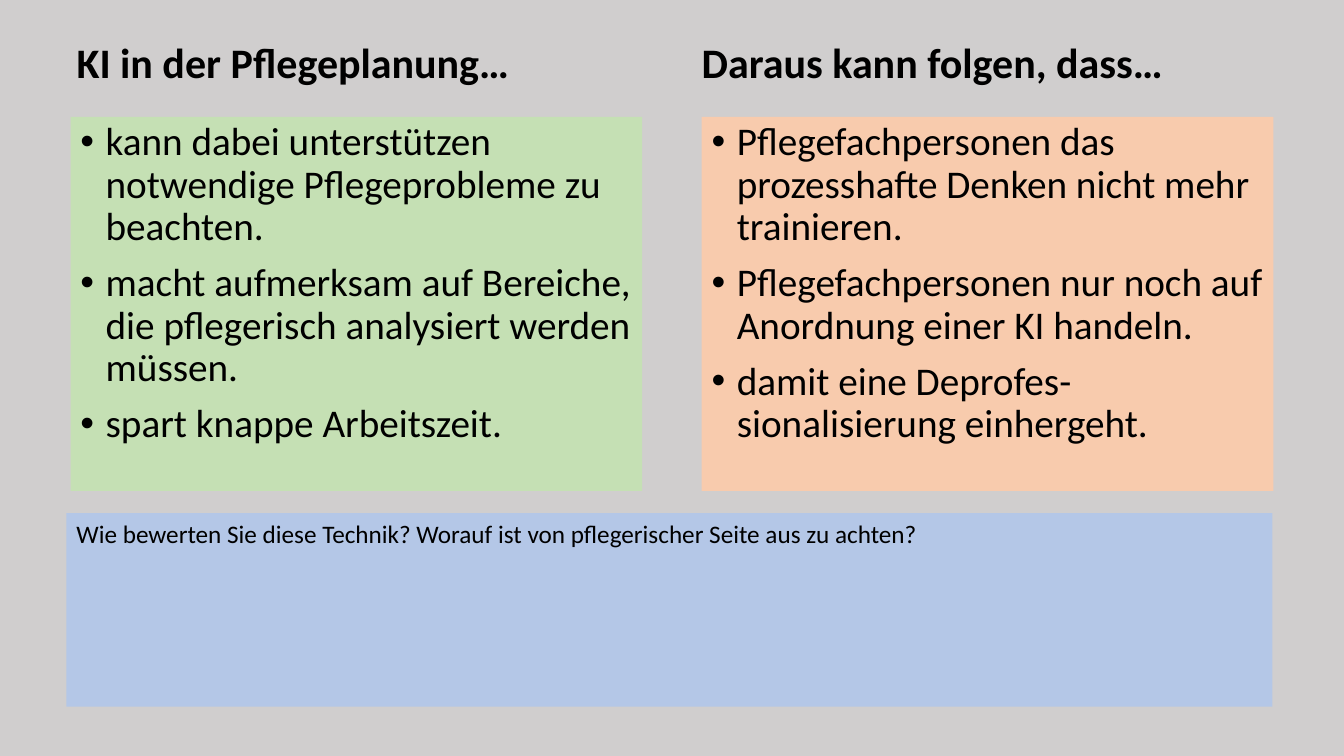
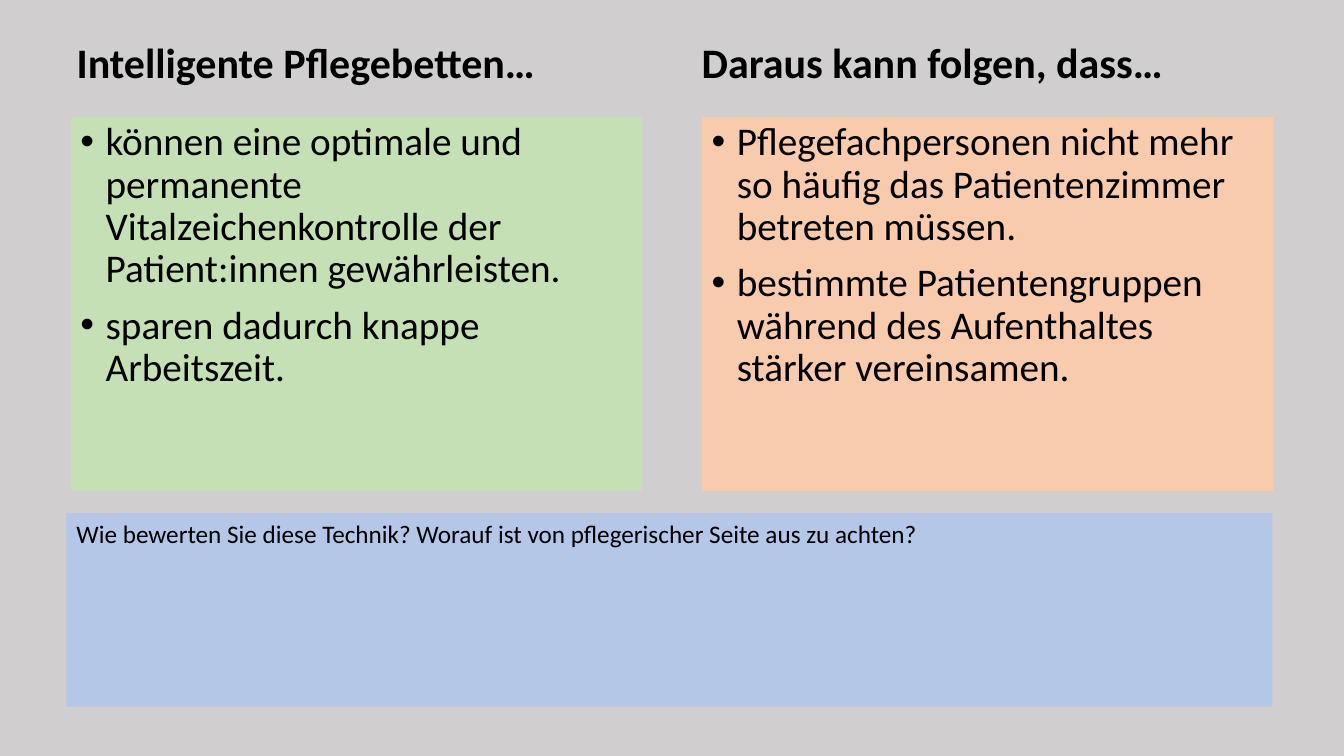
from lxml.etree import SubElement
from pptx import Presentation
from pptx.dml.color import RGBColor
from pptx.enum.shapes import MSO_SHAPE
from pptx.enum.text import MSO_ANCHOR, MSO_AUTO_SIZE, PP_ALIGN
from pptx.oxml.ns import qn
from pptx.util import Inches, Pt

BACKGROUND = RGBColor(0xD0, 0xCE, 0xCE)
GREEN = RGBColor(0xC5, 0xE0, 0xB4)
ORANGE = RGBColor(0xF8, 0xCB, 0xAD)
BLUE = RGBColor(0xB4, 0xC7, 0xE7)
BLACK = RGBColor(0, 0, 0)
FONT = "Calibri"

TITLE_BOX = (0.66, 0.31, 11.71, 0.61)
CLAIMS_BOX = (0.7, 1.16, 5.67, 3.71)
CONSEQUENCES_BOX = (6.96, 1.16, 5.67, 3.71)
QUESTION_BOX = (0.66, 5.09, 11.96, 1.92)
SECOND_HEADING_TAB = 6.2

CONSEQUENCES_HEADING = "Daraus kann folgen, dass…"
QUESTION = "Wie bewerten Sie diese Technik? Worauf ist von pflegerischer Seite aus zu achten?"

SLIDES = [
    (
        "KI in der Pflegeplanung…",
        [
            "kann dabei unterstützen notwendige Pflegeprobleme zu beachten.",
            "macht aufmerksam auf Bereiche, die pflegerisch analysiert werden müssen.",
            "spart knappe Arbeitszeit.",
        ],
        [
            "Pflegefachpersonen das prozesshafte Denken nicht mehr trainieren.",
            "Pflegefachpersonen nur noch auf Anordnung einer KI handeln.",
            "damit eine Deprofes-sionalisierung einhergeht.",
        ],
    ),
    (
        "Intelligente Pflegebetten…",
        [
            "können eine optimale und permanente Vitalzeichenkontrolle der Patient:innen gewährleisten.",
            "sparen dadurch knappe Arbeitszeit.",
        ],
        [
            "Pflegefachpersonen nicht mehr so häufig das Patientenzimmer betreten müssen.",
            "bestimmte Patientengruppen während des Aufenthaltes stärker vereinsamen.",
        ],
    ),
]


def format_paragraph(paragraph, size, bold=False):
    paragraph.alignment = PP_ALIGN.LEFT
    font = paragraph.font
    font.name = FONT
    font.size = Pt(size)
    font.bold = bold
    font.color.rgb = BLACK


def add_bullet(paragraph):
    paragraph.line_spacing = 0.9
    paragraph.space_before = Pt(10)
    properties = paragraph._p.get_or_add_pPr()
    properties.set("marL", str(Inches(0.25)))
    properties.set("indent", str(Inches(-0.25)))
    SubElement(properties, qn("a:buFont"), typeface="Arial")
    SubElement(properties, qn("a:buChar"), char="•")


def add_title(slide, box, left_heading, right_heading):
    title = slide.shapes.title
    title.left, title.top, title.width, title.height = map(Inches, box)
    frame = title.text_frame
    frame.text = f"{left_heading}\t{right_heading}"
    frame.word_wrap = True
    frame.auto_size = MSO_AUTO_SIZE.NONE
    frame.vertical_anchor = MSO_ANCHOR.TOP
    paragraph = frame.paragraphs[0]
    tabs = SubElement(paragraph._p.get_or_add_pPr(), qn("a:tabLst"))
    SubElement(tabs, qn("a:tab"), pos=str(Inches(SECOND_HEADING_TAB)), algn="l")
    format_paragraph(paragraph, 30, bold=True)


def add_panel(slide, box, color, texts, size, bulleted=False):
    panel = slide.shapes.add_shape(MSO_SHAPE.RECTANGLE, *map(Inches, box))
    panel.shadow.inherit = False
    panel.fill.solid()
    panel.fill.fore_color.rgb = color
    panel.line.fill.background()
    frame = panel.text_frame
    frame.word_wrap = True
    frame.vertical_anchor = MSO_ANCHOR.TOP
    frame.text = "\n".join(texts)
    for paragraph in frame.paragraphs:
        if bulleted:
            add_bullet(paragraph)
        format_paragraph(paragraph, size)


def add_discussion_slide(presentation, heading, claims, consequences):
    slide = presentation.slides.add_slide(presentation.slide_layouts.get_by_name("Title Only"))
    slide.background.fill.solid()
    slide.background.fill.fore_color.rgb = BACKGROUND
    add_title(slide, TITLE_BOX, heading, CONSEQUENCES_HEADING)
    add_panel(slide, CLAIMS_BOX, GREEN, claims, 28, bulleted=True)
    add_panel(slide, CONSEQUENCES_BOX, ORANGE, consequences, 28, bulleted=True)
    add_panel(slide, QUESTION_BOX, BLUE, [QUESTION], 18)


def main():
    presentation = Presentation()
    presentation.slide_width = Inches(13.33)
    presentation.slide_height = Inches(7.5)
    for heading, claims, consequences in SLIDES:
        add_discussion_slide(presentation, heading, claims, consequences)
    presentation.save("out.pptx")


if __name__ == "__main__":
    main()
